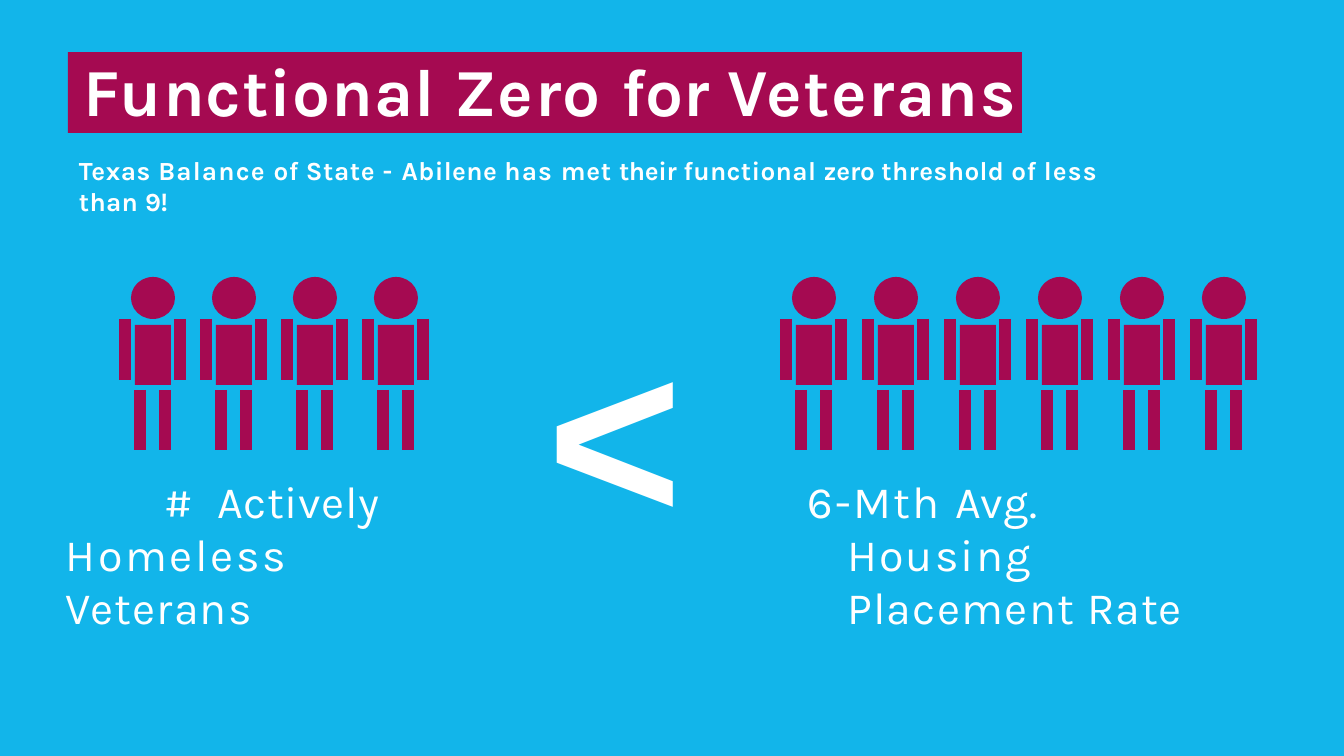
from lxml.etree import SubElement
from pptx import Presentation
from pptx.dml.color import RGBColor
from pptx.enum.shapes import MSO_CONNECTOR as CONN, MSO_SHAPE as SHAPE
from pptx.enum.text import MSO_ANCHOR as ANCHOR, PP_ALIGN as ALIGN
from pptx.oxml.ns import qn
from pptx.util import Pt

SKY = RGBColor(0x12, 0xB5, 0xEA)
BERRY = RGBColor(0xA5, 0x0A, 0x51)
WHITE = RGBColor(0xFF, 0xFF, 0xFF)
EMU_PER_PX = 9144000 / 1344


def px(n):
    return round(n * EMU_PER_PX)


class Board:
    def __init__(self, slide, font="Karla", ink=WHITE, accent=BERRY):
        self.s, self.font, self.ink, self.accent = slide, font, ink, accent

    def background(self, color):
        fill = self.s.background.fill
        fill.solid()
        fill.fore_color.rgb = color

    def shape(self, kind, x, y, w, h):
        sp = self.s.shapes.add_shape(kind, px(x), px(y), px(w), px(h))
        sp.shadow.inherit = False
        sp.fill.solid()
        sp.fill.fore_color.rgb = self.accent
        sp.line.fill.background()
        return sp

    def limb(self, x, top, bottom, weight):
        c = self.s.shapes.add_connector(CONN.STRAIGHT, px(x), px(top), px(x), px(bottom))
        c.line.color.rgb = self.accent
        c.line.width = Pt(weight)
        SubElement(c._element.spPr, qn("a:effectLst"))

    def person(self, x, weight):
        self.shape(SHAPE.RECTANGLE, x, 325, 36, 60)
        for dx in (5, 30):
            self.limb(x + dx, 390, 450, weight)
        for dx in (-10, 45):
            self.limb(x + dx, 319, 380, weight)
        self.shape(SHAPE.OVAL, x - 4, 277, 44, 42)

    def people(self, count, x, pitch, weight):
        for i in range(count):
            self.person(x + i * pitch, weight)

    def add_runs(self, sp, runs, size, bold=False, font=None, inset=0,
                 margin=0, indent=0, leading=None, before=0):
        tf = sp.text_frame
        tf.word_wrap = True
        tf.vertical_anchor = ANCHOR.TOP
        tf.margin_left = tf.margin_right = tf.margin_bottom = 0
        tf.margin_top = px(inset)
        p = tf.paragraphs[0]
        p.alignment = ALIGN.LEFT
        p.space_before = Pt(before)
        if leading:
            p.line_spacing = Pt(leading)
        pPr = p._p.get_or_add_pPr()
        pPr.set("marL", str(px(margin)))
        pPr.set("indent", str(px(indent)))
        for text, spacing in runs:
            r = p.add_run()
            r.text = text
            r.font.name = font or self.font
            r.font.size = Pt(size)
            r.font.bold = bold
            r.font.color.rgb = self.ink
            r._r.get_or_add_rPr().set("spc", str(round(spacing * 100)))

    def banner(self, x, y, w, h, runs, size, **style):
        self.add_runs(self.shape(SHAPE.RECTANGLE, x, y, w, h), runs, size, **style)

    def text(self, x, y, w, h, runs, size, **style):
        sp = self.s.shapes.add_textbox(px(x), px(y), px(w), px(h))
        self.add_runs(sp, runs, size, **style)

    def caption(self, x, w, runs, margin, indent):
        self.text(x, 470, w, 110, runs, 24, inset=4, margin=margin,
                  indent=indent, leading=28.5, before=2.2)


def main():
    prs = Presentation()
    prs.slide_width, prs.slide_height = px(1344), px(756)
    board = Board(prs.slides.add_slide(prs.slide_layouts[6]))
    board.background(SKY)

    board.banner(68, 52, 954, 81, [
        ("Functional ", 0.5), ("Zero ", 0.8), ("for ", 0), ("Veterans", 0.8),
    ], 36, bold=True, margin=16, leading=41.8)
    board.text(78, 153, 1085, 35, [
        ("Texas ", 0.3), ("Balance ", 0.6), ("of ", 0.2), ("State ", 0.3),
        ("- ", 0.7), ("Abilene ", 0.2), ("has ", 0.6), ("met ", 0.3),
        ("their ", -0.2), ("functional ", 0.2), ("zero ", -0.1),
        ("threshold of ", 0.2), ("less ", 0.6), ("than ", 0.1), ("9!", -0.4),
    ], 14, bold=True, inset=1, margin=1, before=1)

    board.people(4, x=135, pitch=81, weight=6.2)
    board.people(6, x=796, pitch=82, weight=6.11)
    board.text(547, 289, 138, 281, [("<", 0)], 124, bold=True, font="Arial",
               inset=1, margin=1, before=1)

    board.caption(65, 410, [
        ("# ", 3.7), ("Actively ", 0.3), ("Homeless ", 1.4), ("Veterans", 0.6),
    ], margin=1, indent=99)
    board.caption(805, 415, [
        ("6-Mth ", 1.3), ("Avg. ", 0.4), ("Housing ", 1.2),
        ("Placement ", 0.7), ("Rate", 0.4),
    ], margin=42, indent=-40)
    prs.save("out.pptx")


if __name__ == "__main__":
    main()
